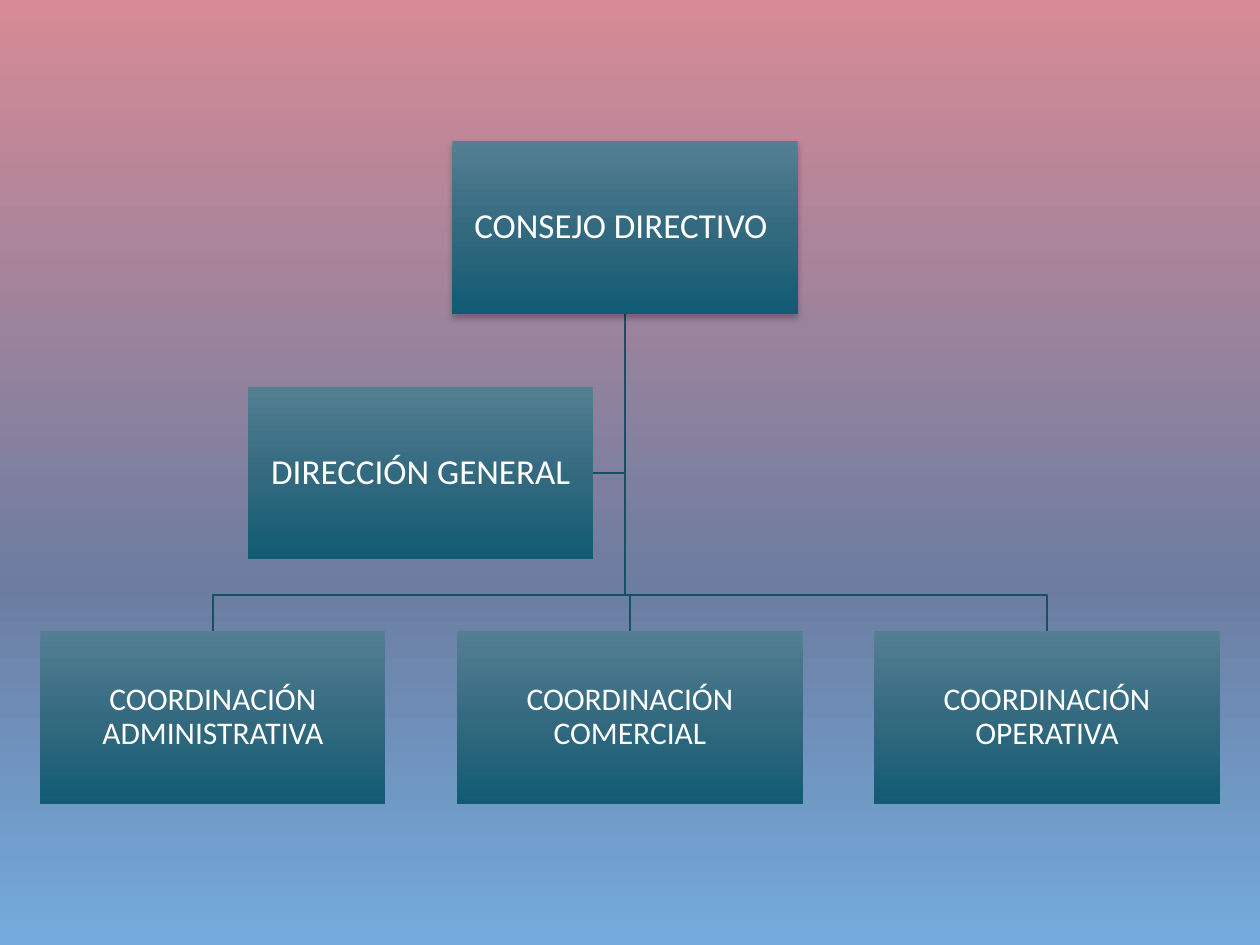
from dataclasses import dataclass

from lxml.etree import SubElement
from pptx import Presentation
from pptx.dml.color import RGBColor as RGB
from pptx.enum.shapes import MSO_SHAPE as Preset
from pptx.enum.text import MSO_ANCHOR as Anchor, PP_ALIGN as Align
from pptx.oxml.ns import qn
from pptx.util import Inches, Pt


@dataclass(frozen=True)
class Theme:
    font: str = "Calibri"
    text: str = "FFFFFF"
    line: str = "165063"
    line_width: float = 1.25
    shadow: str = "000000"
    upper_size: int = 20
    lower_size: int = 18
    backdrop: tuple = ((0, "D78A95"), (62, "6C7DA1"), (100, "73ABDD"))
    box: tuple = ((0, "547F93"), (50, "346A80"), (100, "105B73"))


BOX_W, BOX_H = 2.74, 1.37
TRUNK_X = 4.96
TOP_Y, ASSISTANT_Y, TEAM_Y = 1.12, 3.07, 5.01
BRANCH_Y = TEAM_Y - 0.29
TEAM_LEFT, TEAM_PITCH = 0.32, 3.31
ASSISTANT_LEFT = 1.97
TEAMS = ("COORDINACIÓN ADMINISTRATIVA", "COORDINACIÓN COMERCIAL",
         "COORDINACIÓN OPERATIVA")


class OrgChart:
    def __init__(self, slide, theme):
        self.slide = slide
        self.theme = theme

    def gradient(self, fill, owner, stops):
        """Fill from top to bottom with (percent, colour) stops; owner is the XML holding the fill."""
        fill.gradient()
        fill.gradient_angle = 270
        stop_list = owner.find(".//" + qn("a:gsLst"))
        for default_stop in list(stop_list):
            stop_list.remove(default_stop)
        for percent, colour in stops:
            stop = SubElement(stop_list, qn("a:gs"), pos=str(percent * 1000))
            SubElement(stop, qn("a:srgbClr"), val=colour)

    def backdrop(self):
        self.gradient(self.slide.background.fill, self.slide._element, self.theme.backdrop)

    def link(self, *points):
        """Draw an open elbow line through points given in inches."""
        start, *others = [(Inches(x), Inches(y)) for x, y in points]
        builder = self.slide.shapes.build_freeform(*start)
        builder.add_line_segments(others, close=False)
        elbow = builder.convert_to_shape()
        elbow.shadow.inherit = False
        elbow.fill.background()
        elbow.line.color.rgb = RGB.from_string(self.theme.line)
        elbow.line.width = Pt(self.theme.line_width)

    def box(self, label, left, top, size):
        unit = self.slide.shapes.add_shape(
            Preset.RECTANGLE, Inches(left), Inches(top), Inches(BOX_W), Inches(BOX_H))
        unit.shadow.inherit = False
        unit.line.fill.background()
        self.gradient(unit.fill, unit._element, self.theme.box)
        frame = unit.text_frame
        frame.word_wrap = True
        frame.vertical_anchor = Anchor.MIDDLE
        frame.margin_left = frame.margin_right = Inches(0.01)
        frame.margin_top = frame.margin_bottom = Inches(0.01)
        frame.text = label
        paragraph = frame.paragraphs[0]
        paragraph.alignment = Align.CENTER
        paragraph.line_spacing = 0.9
        font = paragraph.runs[0].font
        font.name = self.theme.font
        font.size = Pt(size)
        font.color.rgb = RGB.from_string(self.theme.text)
        return unit

    def drop_shadow(self, unit):
        effects = unit._element.spPr.find(qn("a:effectLst"))
        shadow = SubElement(effects, qn("a:outerShdw"), blurRad=str(Pt(4)),
                            dist=str(Pt(2)), dir="5400000", rotWithShape="0")
        colour = SubElement(shadow, qn("a:srgbClr"), val=self.theme.shadow)
        SubElement(colour, qn("a:alpha"), val="28000")


def main():
    deck = Presentation()
    deck.slide_width, deck.slide_height = Inches(10), Inches(7.5)
    theme = Theme()
    chart = OrgChart(deck.slides.add_slide(deck.slide_layouts[6]), theme)
    chart.backdrop()

    trunk_top = (TRUNK_X, TOP_Y + BOX_H)
    assistant_mid = ASSISTANT_Y + BOX_H / 2
    chart.link(trunk_top, (TRUNK_X, assistant_mid), (ASSISTANT_LEFT + BOX_W, assistant_mid))
    team_lefts = [TEAM_LEFT + TEAM_PITCH * i for i in range(len(TEAMS))]
    for left in team_lefts:
        centre = left + BOX_W / 2
        chart.link(trunk_top, (TRUNK_X, BRANCH_Y), (centre, BRANCH_Y), (centre, TEAM_Y))

    council = chart.box("CONSEJO DIRECTIVO ", TRUNK_X - BOX_W / 2, TOP_Y, theme.upper_size)
    chart.drop_shadow(council)
    for team, left in zip(TEAMS, team_lefts):
        chart.box(team, left, TEAM_Y, theme.lower_size)
    chart.box("DIRECCIÓN GENERAL", ASSISTANT_LEFT, ASSISTANT_Y, theme.upper_size)

    deck.save("out.pptx")


if __name__ == "__main__":
    main()
